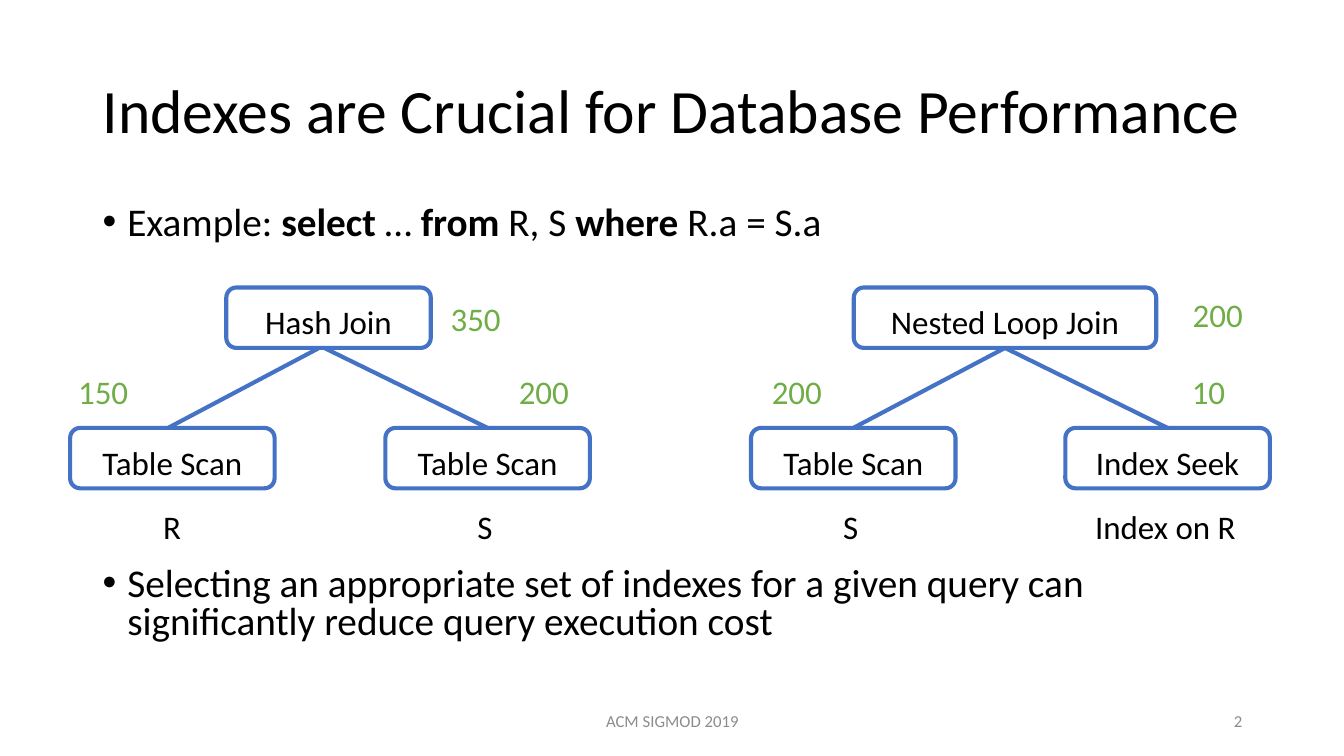
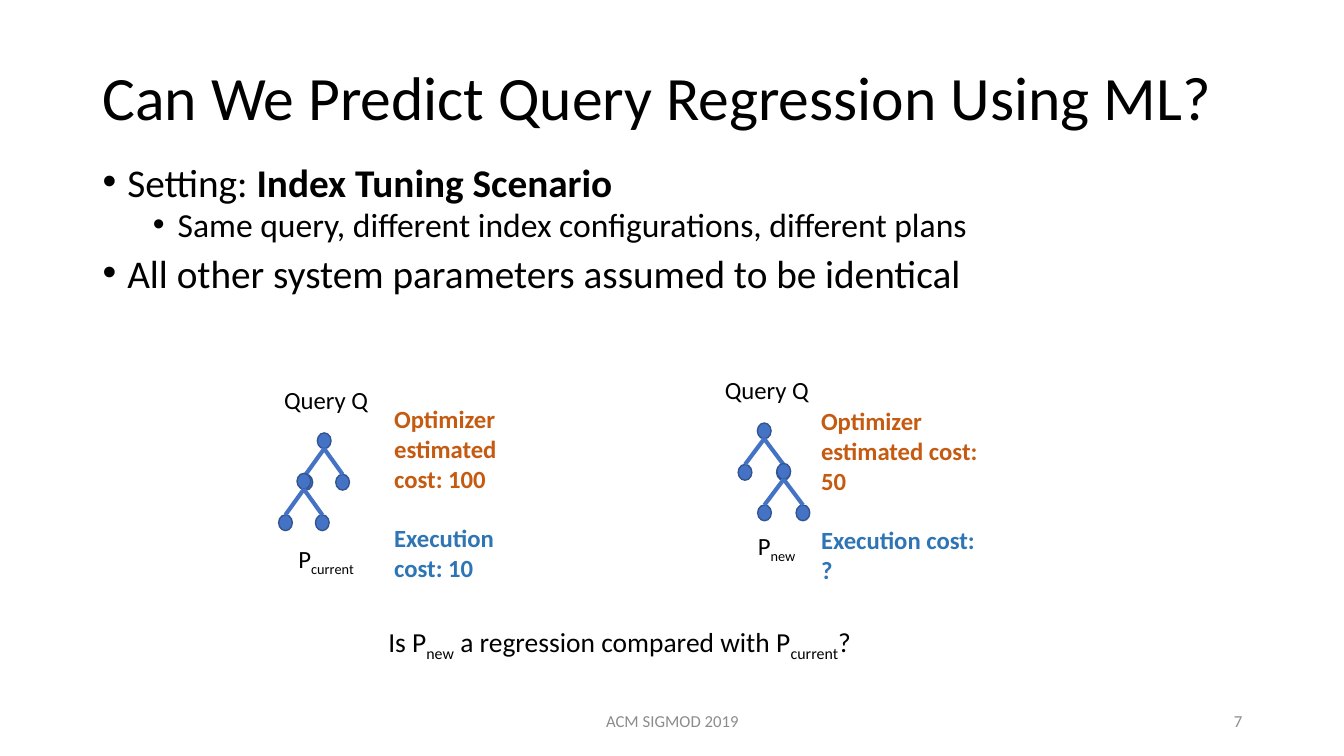
from lxml import etree
from pptx import Presentation
from pptx import util as u
from pptx.dml.color import RGBColor
from pptx.enum import shapes, text
from pptx.oxml.ns import qn

FONT = "Calibri"
BLACK, BLUE, EDGE, GREEN = "000000", "4472C4", "325491", "70AD47"
GREY, ORANGE, SKY = "8C8C8C", "C55A11", "2E75B6"
LEFT, WIDTH = 67.7, 845  # title and body column
PLAN_INSETS = (14.4, 11.5)
CENTER, RIGHT = text.PP_ALIGN.CENTER, text.PP_ALIGN.RIGHT
NODE_W, NODE_H, NODE_DROP = 10, 11.5, 30.2


def rgb(value):
    return RGBColor.from_string(value)


def bold(words):
    return words, {"bold": True}


def sub(words):
    return words, {"sub": True}


# --- text ---------------------------------------------------------------
def add_run(p, words, size, color=BLACK, bold=False, sub=False):
    r = p.add_run()
    r.text = words
    r.font.name, r.font.size, r.font.bold = FONT, u.Pt(size), bold
    r.font.color.rgb = rgb(color)
    if sub:
        r._r.get_or_add_rPr().set("baseline", "-25000")


def add_bullet(p, level):
    pPr = p._p.get_or_add_pPr()
    pPr.set("marL", str(u.Pt(54.7 if level else 18)))
    pPr.set("indent", str(u.Pt(-18)))
    etree.SubElement(pPr, qn("a:buFont")).set("typeface", "Arial")
    etree.SubElement(pPr, qn("a:buChar")).set("char", "•")
    p.level = level


def write(p, runs, size, color=BLACK, align=None, line=None, before=None, after=None):
    """Fill a paragraph; each run is a string or a (string, style) pair."""
    p.alignment = align
    p.line_spacing = line
    if before:
        p.space_before = u.Pt(before)
    if after:
        p.space_after = u.Pt(after)
    for item in runs:
        words, style = (item, {}) if isinstance(item, str) else item
        add_run(p, words, size, **{"color": color, **style})


def set_insets(tf, insets):
    tf.margin_left = tf.margin_right = u.Pt(insets[0])
    tf.margin_top = tf.margin_bottom = u.Pt(insets[1])


def add_box(s, x, y, w, h, wrap=True, middle=False, insets=(7.2, 3.6)):
    tf = s.shapes.add_textbox(u.Pt(x), u.Pt(y), u.Pt(w), u.Pt(h)).text_frame
    tf.word_wrap = wrap
    tf.vertical_anchor = text.MSO_ANCHOR.MIDDLE if middle else text.MSO_ANCHOR.TOP
    set_insets(tf, insets)
    if not wrap:
        tf.auto_size = text.MSO_AUTO_SIZE.SHAPE_TO_FIT_TEXT
    return tf


def add_bullets(s, y, h, items):
    """Each item is (level, runs)."""
    tf = add_box(s, LEFT, y, WIDTH, h)
    for i, (level, runs) in enumerate(items):
        p = tf.add_paragraph() if i else tf.paragraphs[0]
        add_bullet(p, level)
        before = (5.1 if level else 10.2) if i else None
        write(p, runs, 24.5 if level else 28.6, line=0.8, before=before)


def add_slide(prs, title, title_y, number):
    """Blank slide with the shared title and footer."""
    s = prs.slides.add_slide(prs.slide_layouts[6])
    tf = add_box(s, LEFT, title_y, WIDTH, 106.6, middle=True)
    write(tf.paragraphs[0], [title], 44.9, line=0.9)
    for x, w, align, words in ((324.7, 330.5, CENTER, "ACM SIGMOD 2019"),
                               (692, 220.3, RIGHT, number)):
        tf = add_box(s, x, 510.5, w, 29.5, middle=True)
        write(tf.paragraphs[0], [words], 12.2, GREY, align)
    return s


# --- shapes and lines ---------------------------------------------------
def add_shape(s, kind, x, y, w, h, line, weight, fill=None):
    sp = s.shapes.add_shape(kind, u.Pt(x), u.Pt(y), u.Pt(w), u.Pt(h))
    sp.shadow.inherit = False
    sp.line.color.rgb, sp.line.width = rgb(line), u.Pt(weight)
    if fill:
        sp.fill.solid()
        sp.fill.fore_color.rgb = rgb(fill)
    else:
        sp.fill.background()
    return sp


def add_line(s, x1, y1, x2, y2):
    c = s.shapes.add_connector(shapes.MSO_CONNECTOR.STRAIGHT,
                               u.Pt(x1), u.Pt(y1), u.Pt(x2), u.Pt(y2))
    c.line.color.rgb, c.line.width = rgb(BLUE), u.Pt(3)
    etree.SubElement(c._element.spPr, qn("a:effectLst"))
    return c


# --- query plans with named operators -----------------------------------
def add_operator(s, name, x, y, w=149):
    sp = add_shape(s, shapes.MSO_SHAPE.ROUNDED_RECTANGLE, x, y, w, 44, BLUE, 3)
    tf = sp.text_frame
    tf.word_wrap, tf.vertical_anchor = True, text.MSO_ANCHOR.TOP
    set_insets(tf, PLAN_INSETS)
    write(tf.paragraphs[0], [name], 24, align=CENTER, line=0.9)
    return sp


def add_label(s, words, x, y, w, color=BLACK):
    tf = add_box(s, x, y, w, 49.7, wrap=False, insets=PLAN_INSETS)
    write(tf.paragraphs[0], [words], 24, color, line=0.9, after=6)


def link(s, child, parent, child_dx=0, parent_dx=0):
    """Line from a child's top to its parent's bottom, joined where centred."""
    c = add_line(s, child.left.pt + child.width.pt / 2 + child_dx, child.top.pt,
                 parent.left.pt + parent.width.pt / 2 + parent_dx,
                 parent.top.pt + parent.height.pt)
    if not child_dx:
        c.begin_connect(child, 0)
    if not parent_dx:
        c.end_connect(parent, 2)


def add_plan(s, join, children, offsets, labels, costs):
    """Join above two children; offsets shift the line ends off the centres."""
    parent = add_operator(s, *join)
    for (name, x), shift in zip(children, offsets):
        link(s, add_operator(s, name, x, 311.8), parent, *shift)
    for words, x, w in labels:
        add_label(s, words, x, 360.7, w)
    for words, x, y in costs:
        add_label(s, words, x, y, 68.4 if len(words) > 2 else 55.4, GREEN)


# --- small plan trees ---------------------------------------------------
def add_node(s, cx, y):
    add_shape(s, shapes.MSO_SHAPE.OVAL, cx - NODE_W / 2, y, NODE_W, NODE_H, EDGE, 1, BLUE)


def add_branch(s, cx, y, spread):
    """One node with two children below it."""
    add_node(s, cx, y)
    for x in (cx - spread, cx + spread):
        add_node(s, x, y + NODE_DROP)
        add_line(s, cx, y + NODE_H, x, y + NODE_DROP)


def add_caption(s, x, y, w, runs):
    write(add_box(s, x, y, w, 28.8).paragraphs[0], runs, 18, align=CENTER)


def add_costs(s, x, y, w, h, estimate, execution):
    tf = add_box(s, x, y, w, h)
    write(tf.paragraphs[0], [bold("Optimizer estimated cost: " + estimate)], 18, ORANGE)
    write(tf.add_paragraph(), [bold("Execution cost: " + execution)], 18, SKY, before=22)


# --- slides -------------------------------------------------------------
def index_slide(prs):
    s = add_slide(prs, "Indexes are Crucial for Database Performance", 29.5, "2")
    add_bullets(s, 146.9, 45, [(0, ["Example: ", bold("select"), " … ", bold("from"),
                                    " R, S ", bold("where "), "R.a = S.a"])])
    add_bullets(s, 410, 70, [(0, ["Selecting an appropriate set of indexes for a given "
                                  "query can significantly reduce query execution cost"])])
    add_plan(s, ("Hash Join", 164.9, 209.5),
             [("Table Scan", 51.1), ("Table Scan", 280.8)],
             [(-3.2, -6.8), (0, -3.2)],
             [("R", 104.4, 43.9), ("S", 333.4, 43.9)],
             [("150", 42.5, 262.8), ("200", 363.6, 262.8), ("350", 313.9, 209.5)])
    add_plan(s, ("Nested Loop Join", 622.1, 209.5, 220.3),
             [("Table Scan", 547.2), ("Index Seek", 776.2)],
             [(0, 0), (0, 0)],
             [("S", 599.8, 41.8), ("Index on R", 783.4, 143.3)],
             [("200", 547.9, 262.8), ("10", 853.9, 262.8), ("200", 854.6, 206.6)])


def regression_slide(prs):
    s = add_slide(prs, "Can We Predict Query Regression Using ML?", 20.2, "7")
    add_bullets(s, 118.1, 110.2, [
        (0, ["Setting: ", bold("Index Tuning Scenario")]),
        (1, ["Same query, different index configurations, different plans"]),
        (0, ["All other system parameters assumed to be identical"])])

    # current plan
    add_caption(s, 193, 276.5, 89.3, ["Query Q"])
    add_branch(s, 236.2, 315.4, 13.4)
    add_branch(s, 221.4, 344.9, 13.4)
    add_caption(s, 193, 392.4, 89.3, ["P", sub("current")])
    add_costs(s, 280.1, 290.9, 124.6, 138.2, "100", "10")

    # new plan
    add_caption(s, 511.9, 269.3, 93.6, ["Query Q"])
    add_branch(s, 556.8, 308.2, 14)
    add_branch(s, 571, 337.7, 14)
    add_caption(s, 519.1, 383, 93.6, ["P", sub("new")])
    add_costs(s, 591.1, 292.3, 129.6, 159.8, "50", "?")

    # question
    tf = add_box(s, 275.8, 452.2, 362.2, 31.7, wrap=False)
    write(tf.paragraphs[0], ["Is P", sub("new"), " a regression compared with P",
                             sub("current"), "?"], 20)


def main():
    prs = Presentation()
    prs.slide_width, prs.slide_height = u.Pt(979.2), u.Pt(550.8)
    index_slide(prs)
    regression_slide(prs)
    prs.save("out.pptx")


if __name__ == "__main__":
    main()
